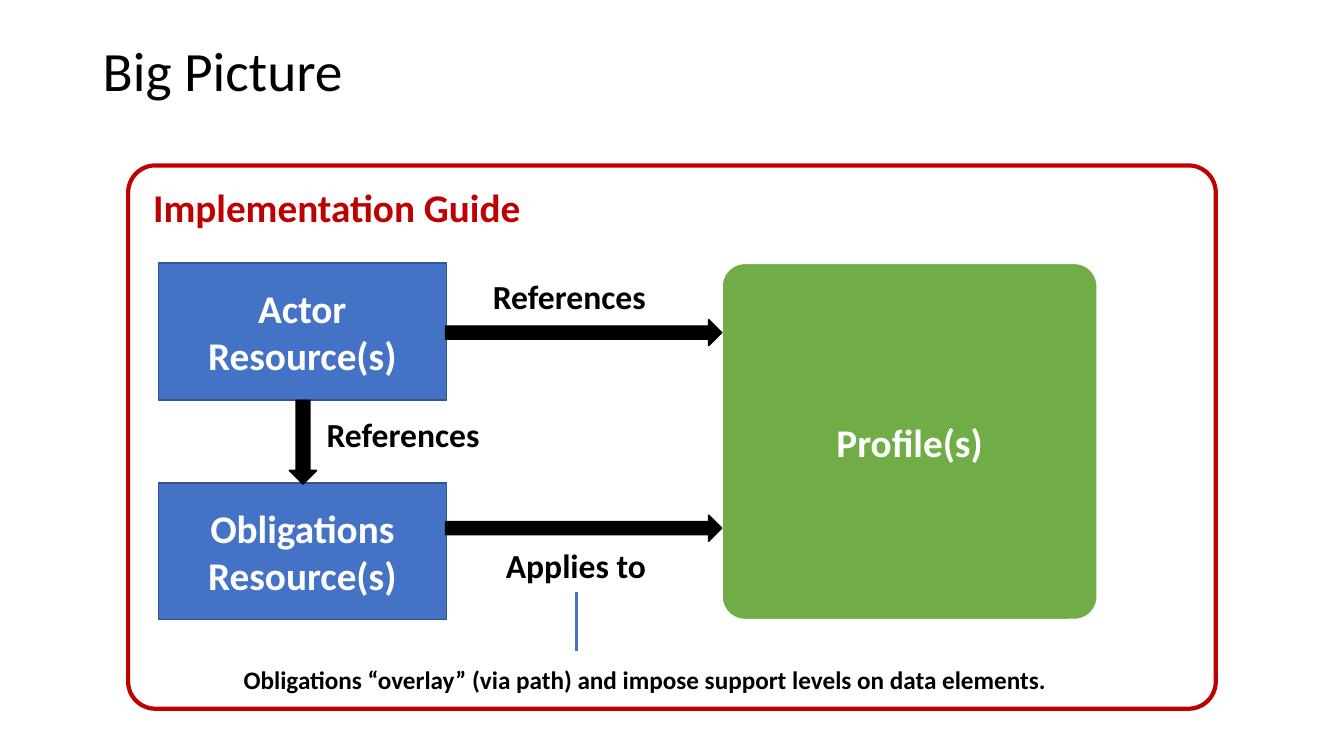
import pptx
import pptx.dml.color
import pptx.enum.shapes
import pptx.enum.text
import pptx.oxml
import pptx.oxml.ns
import pptx.util

Cm = pptx.util.Cm
Pt = pptx.util.Pt
Shape = pptx.enum.shapes.MSO_SHAPE
Align = pptx.enum.text.PP_ALIGN
Anchor = pptx.enum.text.MSO_ANCHOR

COLORS = {
    "black": "000000",
    "white": "FFFFFF",
    "red": "C00000",
    "blue": "4472C4",
    "navy": "325491",
    "green": "70AD47",
}


def color(name):
    return pptx.dml.color.RGBColor.from_string(COLORS[name])


class Diagram:
    """Draws styled elements on one page; lengths are in centimetres."""

    font = "Calibri"

    def __init__(self, page):
        self.page = page

    def set_text(self, shape, text, size, ink, bold=True, align=Align.LEFT):
        shape.text_frame.text = text
        for para in shape.text_frame.paragraphs:
            para.alignment = align
            for span in para.runs:
                span.font.name = self.font
                span.font.size = Pt(size)
                span.font.bold = bold
                span.font.color.rgb = color(ink)

    def label(self, place, text, size=24, ink="black", bold=True, wrap=False):
        box = self.page.shapes.add_textbox(*map(Cm, place))
        box.text_frame.word_wrap = wrap
        self.set_text(box, text, size, ink, bold)
        return box

    def block(self, kind, place, fill, line, width=1, text="", corner=None):
        shape = self.page.shapes.add_shape(kind, *map(Cm, place))
        shape.shadow.inherit = False
        shape.fill.solid()
        shape.fill.fore_color.rgb = color(fill)
        shape.line.color.rgb = color(line)
        shape.line.width = Pt(width)
        if corner is not None:
            shape.adjustments[0] = corner
        if text:
            shape.text_frame.vertical_anchor = Anchor.MIDDLE
            self.set_text(shape, text, 28, "white", align=Align.CENTER)
        return shape

    def arrow(self, place, rotation=0):
        shape = self.block(Shape.RIGHT_ARROW, place, "black", "black")
        shape.rotation = rotation

    def line(self, x1, y1, x2, y2):
        connector = self.page.shapes.add_connector(
            pptx.enum.shapes.MSO_CONNECTOR.STRAIGHT, Cm(x1), Cm(y1), Cm(x2), Cm(y2))
        connector.line.color.rgb = color("blue")
        connector.line.width = Pt(2.25)
        properties = connector._element.spPr
        properties.append(pptx.oxml.parse_xml(
            "<a:effectLst %s/>" % pptx.oxml.ns.nsdecls("a")))


def main():
    deck = pptx.Presentation()
    deck.slide_width = Cm(33.87)
    deck.slide_height = Cm(19.05)
    diagram = Diagram(deck.slides.add_slide(deck.slide_layouts[6]))

    title = diagram.label((2.34, 1.02, 29.21, 1.68), "Big Picture",
                          size=39.6, bold=False, wrap=True)
    title.text_frame.vertical_anchor = Anchor.MIDDLE
    title.text_frame.paragraphs[0].line_spacing = 0.9

    diagram.block(Shape.ROUNDED_RECTANGLE, (3.23, 4.17, 27.41, 13.69),
                  "white", "red", 3, corner=0.05)
    diagram.label((3.61, 4.5, 10.72, 1.45), "Implementation Guide",
                  size=28, ink="red", wrap=True)

    resources = (("Actor", 6.63, 8.05), ("Obligations", 12.17, 12.98))
    for name, top, _ in resources:
        diagram.block(Shape.RECTANGLE, (3.99, top, 7.26, 3.45),
                      "blue", "navy", text=name + "\nResource(s)")
    diagram.block(Shape.ROUNDED_RECTANGLE, (18.19, 6.63, 9.47, 8.99),
                  "green", "white", 1.5, "Profile(s)", corner=0.065)

    for _, _, arrow_top in resources:
        diagram.arrow((11.23, arrow_top, 6.96, 0.66))
    diagram.arrow((6.58, 10.8, 2.11, 0.69), rotation=90)

    diagram.label((7.98, 10.31, 4.42, 1.27), "References")
    diagram.label((12.5, 13.61, 4.09, 1.27), "Applies to")
    diagram.label((12.17, 6.83, 4.42, 1.27), "References")
    diagram.label(
        (5.89, 16.61, 21.79, 1.02),
        "Obligations “overlay” (via path) and impose support levels on data elements.",
        size=18, wrap=True)
    diagram.line(14.53, 16.41, 14.53, 14.91)

    deck.save("out.pptx")


if __name__ == "__main__":
    main()
